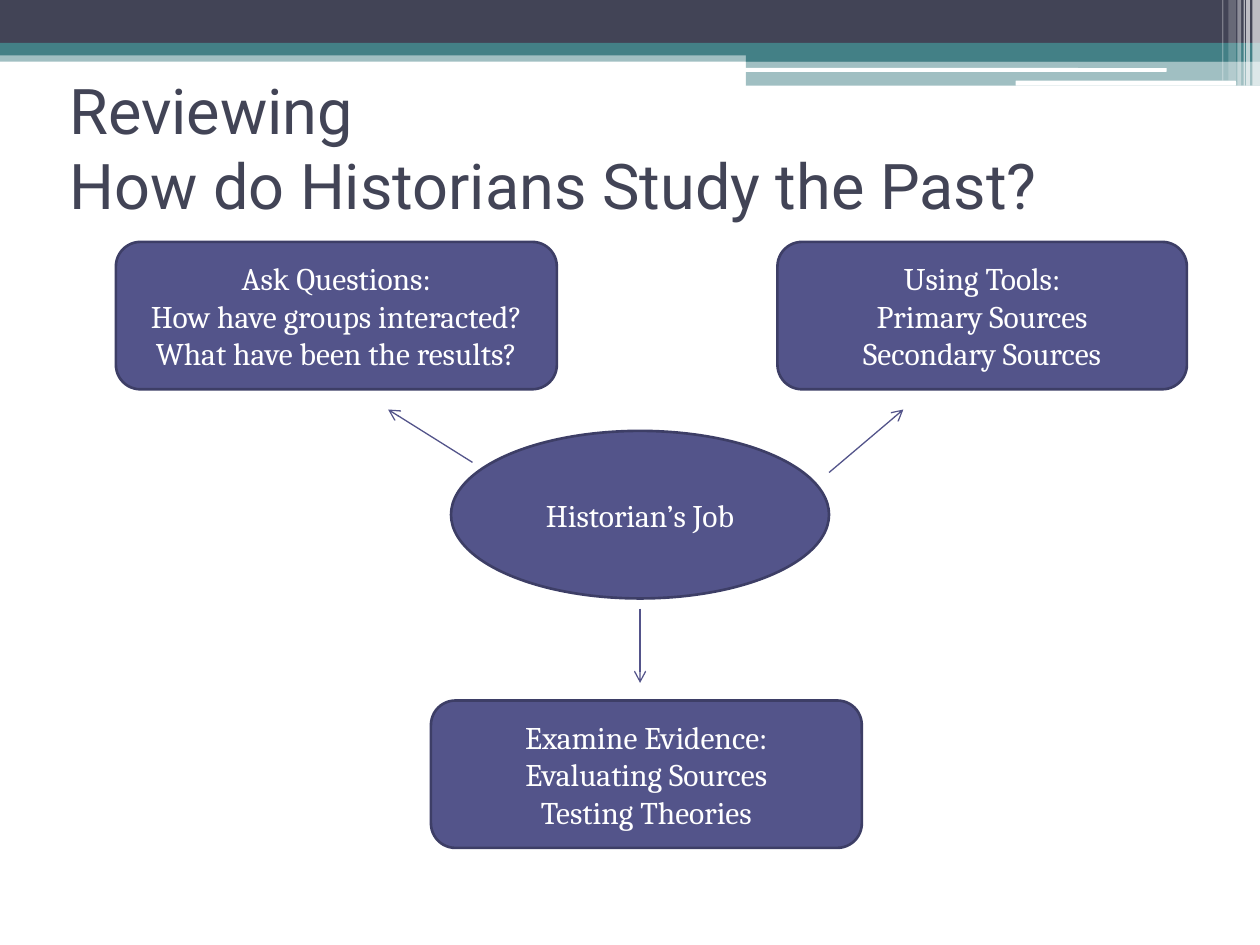
from lxml import etree
from pptx import Presentation
from pptx.dml.color import RGBColor
from pptx.enum.shapes import MSO_CONNECTOR, MSO_SHAPE
from pptx.enum.text import MSO_ANCHOR, MSO_AUTO_SIZE, PP_ALIGN
from pptx.oxml.ns import qn
from pptx.util import Inches, Pt

RECT = MSO_SHAPE.RECTANGLE
ROUNDED = MSO_SHAPE.ROUNDED_RECTANGLE
OVAL = MSO_SHAPE.OVAL
STRAIGHT = MSO_CONNECTOR.STRAIGHT
MIDDLE = MSO_ANCHOR.MIDDLE
CENTER, LEFT = PP_ALIGN.CENTER, PP_ALIGN.LEFT
NO_AUTOFIT = MSO_AUTO_SIZE.NONE

WHITE = RGBColor(0xFF, 0xFF, 0xFF)
SLATE = RGBColor(0x42, 0x44, 0x56)
TEAL = RGBColor(0x43, 0x80, 0x86)
INDIGO = RGBColor(0x53, 0x54, 0x8A)
DARK_INDIGO = RGBColor(0x3D, 0x3E, 0x66)

TITLE_LINES = ["Reviewing", "How do Historians Study the Past?"]
BANDS = [
    (RECT, (0, 0.4, 10, 0.09), TEAL, 50),
    (RECT, (0, 0, 10, 0.34), SLATE, 100),
    (RECT, (0, 0.34, 10, 0.1), TEAL, 100),
    (RECT, (5.92, 0.39, 4.08, 0.1), TEAL, 100),
    (RECT, (5.92, 0.48, 4.08, 0.2), TEAL, 50),
    (ROUNDED, (5.91, 0.54, 3.35, 0.03), WHITE, 100),
    (ROUNDED, (8.06, 0.64, 1.75, 0.04), WHITE, 100),
]
STRIPES = [
    (9.94, 0.06, 0.68, 65),
    (9.89, 0.03, 0.68, 65),
    (9.87, 0.01, 0.68, 60),
    (9.82, 0.03, 0.68, 40),
    (9.75, 0.06, 0.64, 20),
    (9.7, 0.01, 0.64, 30),
]
NODES = [
    (OVAL, (3.58, 3.42, 3, 1.33), ["Historian’s Job"]),
    (ROUNDED, (0.92, 1.92, 3.5, 1.17),
     ["Ask Questions:", "How have groups interacted?", "What have been the results?"]),
    (ROUNDED, (6.17, 1.92, 3.25, 1.17),
     ["Using Tools:", "Primary Sources", "Secondary Sources"]),
    (ROUNDED, (3.42, 5.56, 3.42, 1.17),
     ["Examine Evidence:", "Evaluating Sources", "Testing Theories"]),
]
ARROWS = [
    (3.75, 3.67, 3.08, 3.25),
    (6.58, 3.75, 7.17, 3.25),
    (5.08, 4.83, 5.08, 5.42),
]


def add_filled_shape(slide, kind, box, color):
    """Add a flat shape of one colour in a box given in inches."""
    shape = slide.shapes.add_shape(kind, *map(Inches, box))
    shape.shadow.inherit = False
    shape.fill.solid()
    shape.fill.fore_color.rgb = color
    return shape


def add_band(slide, kind, box, color, opacity):
    """Add one borderless header band with an opacity in percent."""
    band = add_filled_shape(slide, kind, box, color)
    band.line.fill.background()
    if opacity < 100:
        srgb = band.fill._xPr.find(".//" + qn("a:srgbClr"))
        etree.SubElement(srgb, qn("a:alpha"), val=str(opacity * 1000))


def add_header(slide):
    """Draw the header bands and the pale stripes at their right end."""
    for band in BANDS:
        add_band(slide, *band)
    for left, width, height, opacity in STRIPES:
        add_band(slide, RECT, (left, 0, width, height), WHITE, opacity)


def style_run(run, font_name, size, color):
    """Set the font, size and colour of a run."""
    run.font.name = font_name
    run.font.size = Pt(size)
    run.font.color.rgb = color


def add_title(slide, box):
    """Place the title and fill it line by line."""
    title = slide.shapes.title
    title.left, title.top, title.width, title.height = map(Inches, box)
    frame = title.text_frame
    frame.vertical_anchor = MIDDLE
    frame.auto_size = NO_AUTOFIT
    paragraph = frame.paragraphs[0]
    paragraph.alignment = LEFT
    for index, line in enumerate(TITLE_LINES):
        if index:
            paragraph.add_line_break()
        run = paragraph.add_run()
        run.text = line
        style_run(run, "Roboto", 36, SLATE)


def add_node(slide, kind, box, lines):
    """Add one diagram node with a centred paragraph for each line."""
    node = add_filled_shape(slide, kind, box, INDIGO)
    node.line.color.rgb = DARK_INDIGO
    node.line.width = Pt(1.5)
    frame = node.text_frame
    frame.word_wrap = True
    frame.vertical_anchor = MIDDLE
    for index, line in enumerate(lines):
        paragraph = frame.add_paragraph() if index else frame.paragraphs[0]
        paragraph.alignment = CENTER
        run = paragraph.add_run()
        run.text = line
        style_run(run, "Cambria", 18, WHITE)


def add_arrow(slide, ends):
    """Add a thin arrow between two points given in inches."""
    arrow = slide.shapes.add_connector(STRAIGHT, *map(Inches, ends))
    arrow.line.color.rgb = INDIGO
    arrow.line.width = Pt(0.75)
    etree.SubElement(arrow.line._get_or_add_ln(), qn("a:tailEnd"), type="arrow")
    etree.SubElement(arrow._element.spPr, qn("a:effectLst"))


def add_diagram(slide):
    """Draw the historian's job, its three parts and the arrows to them."""
    for node in NODES:
        add_node(slide, *node)
    for ends in ARROWS:
        add_arrow(slide, ends)


def main():
    """Build the slide and save it."""
    presentation = Presentation()
    presentation.slide_width = Inches(10)
    presentation.slide_height = Inches(7.5)
    slide = presentation.slides.add_slide(presentation.slide_layouts[5])
    slide.background.fill.solid()
    slide.background.fill.fore_color.rgb = WHITE
    add_header(slide)
    add_title(slide, (0.45, 0.58, 9, 1.17))
    add_diagram(slide)
    presentation.save("out.pptx")


if __name__ == "__main__":
    main()
